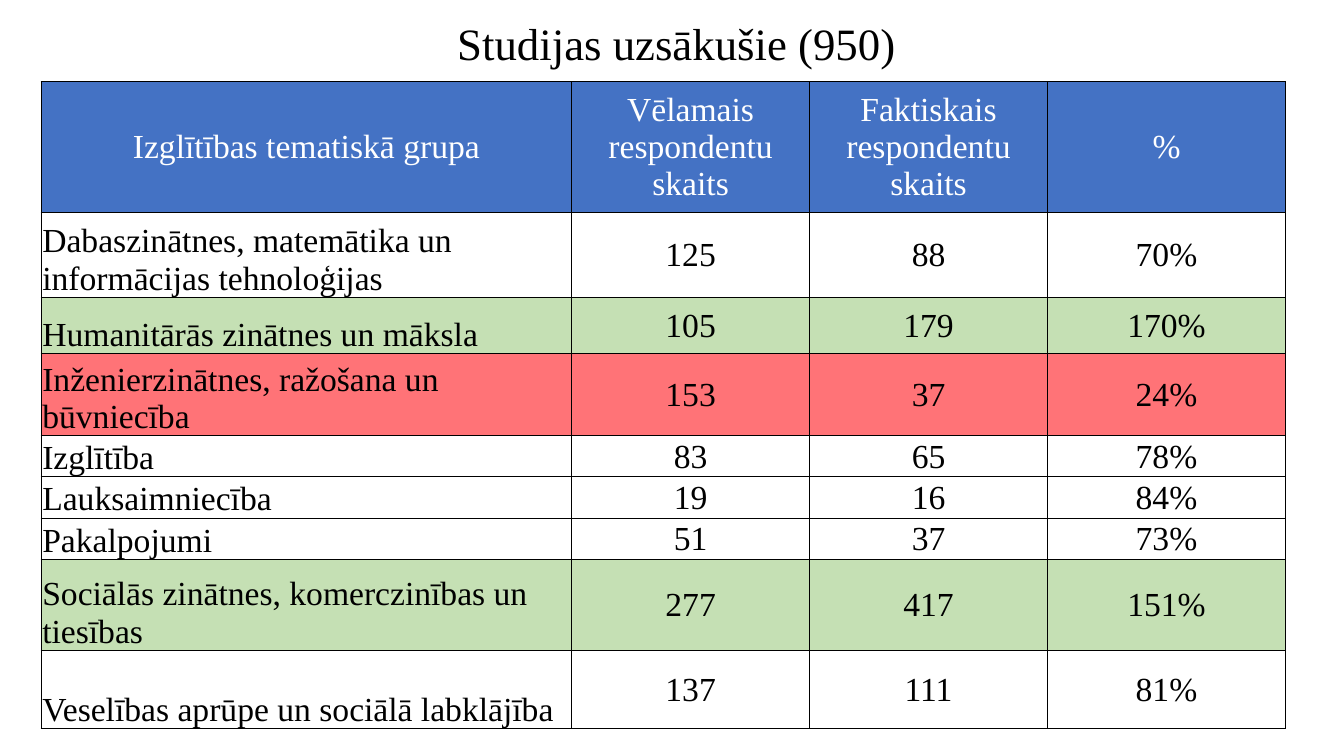
from lxml.etree import SubElement
from pptx import Presentation
from pptx.dml.color import RGBColor
from pptx.enum.text import MSO_ANCHOR as Anchor, PP_ALIGN as Align
from pptx.oxml.ns import qn
from pptx.util import Inches, Pt

FONT = "Times New Roman"
COLORS = {
    "ink": "000000",
    "head": "4472C4",
    "plain": "FFFFFF",
    "high": "C5E0B4",
    "low": "FF7377",
}
HEADS = ["Izglītības tematiskā grupa", "Vēlamais respondentu skaits",
         "Faktiskais respondentu skaits", "%"]
# Row height, fill, cell texts
ROWS = [
    (1.3, "head", HEADS),
    (0.84, "plain", ["Dabaszinātnes, matemātika un informācijas tehnoloģijas",
                     "125", "88", "70%"]),
    (0.56, "high", ["Humanitārās zinātnes un māksla", "105", "179", "170%"]),
    (0.78, "low", ["Inženierzinātnes, ražošana un būvniecība",
                   "153", "37", "24%"]),
    (0.39, "plain", ["Izglītība", "83", "65", "78%"]),
    (0.39, "plain", ["Lauksaimniecība", "19", "16", "84%"]),
    (0.39, "plain", ["Pakalpojumi", "51", "37", "73%"]),
    (0.9, "high", ["Sociālās zinātnes, komerczinības un tiesības",
                   "277", "417", "151%"]),
    (0.78, "plain", ["Veselības aprūpe un sociālā labklājība",
                     "137", "111", "81%"]),
]


def color(name):
    return RGBColor.from_string(COLORS[name])


def write(frame, text, size, ink, align):
    para = frame.paragraphs[0]
    para.alignment = align
    run = para.add_run()
    run.text = text
    run.font.name = FONT
    run.font.size = Pt(size)
    run.font.color.rgb = color(ink)
    return para


def add_title(slide, left, top, width, height):
    box = slide.shapes.add_textbox(
        Inches(left), Inches(top), Inches(width), Inches(height))
    frame = box.text_frame
    frame.word_wrap = True
    frame.vertical_anchor = Anchor.MIDDLE
    para = write(frame, "Studijas uzsākušie (950)", 32, "ink", Align.CENTER)
    para.line_spacing = 0.9


def add_edges(cell):
    """Draw a thin line on all four sides; call before the fill is set."""
    props = cell._tc.get_or_add_tcPr()
    for side in ("a:lnL", "a:lnR", "a:lnT", "a:lnB"):
        line = SubElement(props, qn(side), w=str(Pt(1)))
        fill = SubElement(line, qn("a:solidFill"))
        SubElement(fill, qn("a:srgbClr"), val=COLORS["ink"])


def fill_cell(cell, text, tone, first):
    head = tone == "head"
    label = first and not head
    add_edges(cell)
    cell.fill.solid()
    cell.fill.fore_color.rgb = color(tone)
    cell.vertical_anchor = Anchor.BOTTOM if label else Anchor.MIDDLE
    if not head:
        cell.margin_left = cell.margin_right = cell.margin_top = Inches(0.01)
        cell.margin_bottom = 0
    write(cell.text_frame, text, 24, "plain" if head else "ink",
          Align.LEFT if label else Align.CENTER)


def add_grid(slide, left, top, width, height):
    table = slide.shapes.add_table(
        len(ROWS), len(HEADS), Inches(left), Inches(top),
        Inches(width), Inches(height)).table
    wide = 5.26
    slim = (width - wide) / (len(HEADS) - 1)
    for n, col in enumerate(table.columns):
        col.width = Inches(slim if n else wide)
    for r, (tall, tone, texts) in enumerate(ROWS):
        table.rows[r].height = Inches(tall)
        for c, text in enumerate(texts):
            fill_cell(table.cell(r, c), text, tone, c == 0)


def main():
    deck = Presentation()
    deck.slide_width = Inches(13.33)
    deck.slide_height = Inches(7.5)
    slide = deck.slides.add_slide(deck.slide_layouts[6])
    add_title(slide, 2.77, 0.1, 7.88, 0.72)
    add_grid(slide, 0.41, 0.81, 12.34, sum(row[0] for row in ROWS))
    deck.save("out.pptx")


if __name__ == "__main__":
    main()
